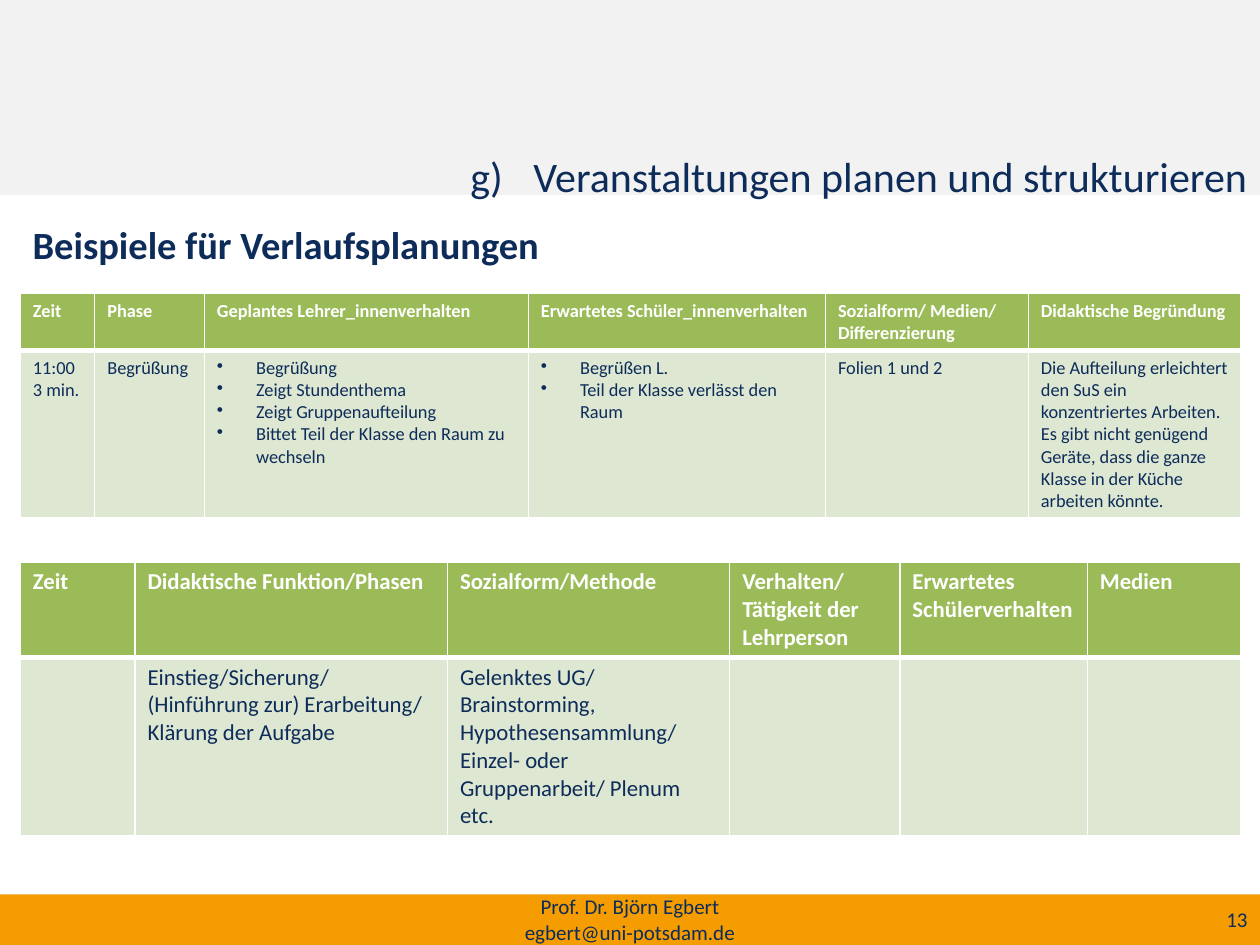
from lxml import etree
from pptx import Presentation
from pptx.dml.color import RGBColor
from pptx.enum.shapes import MSO_SHAPE
from pptx.enum.text import MSO_ANCHOR, MSO_AUTO_SIZE, PP_ALIGN
from pptx.oxml.ns import qn
from pptx.util import Cm, Pt

NAVY = RGBColor(0x0D, 0x2C, 0x5A)
WHITE = RGBColor(0xFF, 0xFF, 0xFF)
LIGHT_GREY = RGBColor(0xF2, 0xF2, 0xF2)
ORANGE = RGBColor(0xF5, 0x9C, 0x00)
GREEN = RGBColor(0x9B, 0xBB, 0x59)
PALE_GREEN = RGBColor(0xDE, 0xE7, 0xD1)
FONT = "Calibri"
SLIDE_WIDTH = 25.4
TABLE_LEFT = 0.41

# Each cell is a list of paragraphs; those starting with "•" become bullets
LESSON_PLAN = [
    [["Zeit"], ["Phase"], ["Geplantes Lehrer_innenverhalten"],
     ["Erwartetes Schüler_innenverhalten"],
     ["Sozialform/ Medien/ Differenzierung"], ["Didaktische Begründung"]],
    [["11:00", "3 min."], ["Begrüßung"],
     ["•Begrüßung", "•Zeigt Stundenthema", "•Zeigt Gruppenaufteilung",
      "•Bittet Teil der Klasse den Raum zu wechseln"],
     ["•Begrüßen L.", "•Teil der Klasse verlässt den Raum"],
     ["Folien 1 und 2"],
     ["Die Aufteilung erleichtert den SuS ein konzentriertes Arbeiten. "
      "Es gibt nicht genügend Geräte, dass die ganze Klasse in der Küche "
      "arbeiten könnte."]],
]
PLAN_TEMPLATE = [
    [["Zeit"], ["Didaktische Funktion/Phasen"], ["Sozialform/Methode"],
     ["Verhalten/ Tätigkeit der Lehrperson"],
     ["Erwartetes Schülerverhalten"], ["Medien"]],
    [[],
     ["Einstieg/Sicherung/ (Hinführung zur) Erarbeitung/ Klärung der Aufgabe"],
     ["Gelenktes UG/ Brainstorming, Hypothesensammlung/ Einzel- oder "
      "Gruppenarbeit/ Plenum etc."],
     [], [], []],
]


def add_marker(paragraph, indent, tag, **attributes):
    """Give a paragraph a hanging bullet or number."""
    properties = paragraph._p.get_or_add_pPr()
    properties.set("marL", str(indent))
    properties.set("indent", str(-indent))
    etree.SubElement(properties, qn(tag), attributes)


def style_paragraph(paragraph, size, color=NAVY, bold=False, align=PP_ALIGN.LEFT):
    paragraph.alignment = align
    for run in paragraph.runs:
        run.font.name = FONT
        run.font.size = Pt(size)
        run.font.bold = bold
        run.font.color.rgb = color


def add_band(slide, top, height, color):
    band = slide.shapes.add_shape(
        MSO_SHAPE.RECTANGLE, 0, Cm(top), Cm(SLIDE_WIDTH), Cm(height))
    band.shadow.inherit = False
    band.fill.solid()
    band.fill.fore_color.rgb = color
    band.line.fill.background()


def add_text(slide, text, left, top, width, height, size,
             bold=False, align=PP_ALIGN.LEFT, anchor=MSO_ANCHOR.TOP):
    frame = slide.shapes.add_textbox(
        Cm(left), Cm(top), Cm(width), Cm(height)).text_frame
    frame.word_wrap = True
    frame.vertical_anchor = anchor
    frame.text = text
    for paragraph in frame.paragraphs:
        style_paragraph(paragraph, size, bold=bold, align=align)


def set_title(slide, text):
    title = slide.shapes.title
    title.left, title.top = Cm(3.5), Cm(2.9)
    title.width, title.height = Cm(21.9), Cm(1.25)
    frame = title.text_frame
    frame.auto_size = MSO_AUTO_SIZE.NONE
    frame.vertical_anchor = MSO_ANCHOR.TOP
    frame.text = text
    heading = frame.paragraphs[0]
    add_marker(heading, Cm(1.27), "a:buAutoNum", type="alphaLcParenR", startAt="7")
    style_paragraph(heading, 24, align=PP_ALIGN.RIGHT)
    # Bring the title in front of the grey band
    title.element.getparent().append(title.element)


def set_borders(cell, bottom_width):
    properties = cell._tc.get_or_add_tcPr()
    for side, width in (("L", 1), ("R", 1), ("T", 1), ("B", bottom_width)):
        line = etree.SubElement(properties, qn(f"a:ln{side}"), w=str(Pt(width)))
        fill = etree.SubElement(line, qn("a:solidFill"))
        etree.SubElement(fill, qn("a:srgbClr"), val=str(WHITE))


def fill_cell(cell, lines, size, is_header):
    set_borders(cell, 3 if is_header else 1)
    cell.fill.solid()
    cell.fill.fore_color.rgb = GREEN if is_header else PALE_GREEN
    cell.text_frame.text = "\n".join(line.lstrip("•") for line in lines)
    for line, paragraph in zip(lines, cell.text_frame.paragraphs):
        if line.startswith("•"):
            add_marker(paragraph, Cm(0.79), "a:buChar", char="•")
        style_paragraph(paragraph, size, WHITE if is_header else NAVY, is_header)


def add_plan(slide, rows, top, widths, heights, size):
    table = slide.shapes.add_table(
        len(rows), len(widths), Cm(TABLE_LEFT), Cm(top),
        Cm(sum(widths)), Cm(sum(heights))).table
    table.horz_banding = False
    for column, width in zip(table.columns, widths):
        column.width = Cm(width)
    for row_index, (row, height) in enumerate(zip(rows, heights)):
        table.rows[row_index].height = Cm(height)
        for column_index, lines in enumerate(row):
            fill_cell(table.cell(row_index, column_index), lines, size,
                      is_header=row_index == 0)


def main():
    presentation = Presentation()
    presentation.slide_width = Cm(SLIDE_WIDTH)
    presentation.slide_height = Cm(19.05)
    slide = presentation.slides.add_slide(presentation.slide_layouts[5])

    # Header and footer bands
    add_band(slide, 0, 3.93, LIGHT_GREY)
    add_band(slide, 18.03, 1.02, ORANGE)
    add_text(slide, "13", 19.3, 18.01, 6.1, 1.02, 12,
             align=PP_ALIGN.RIGHT, anchor=MSO_ANCHOR.MIDDLE)
    add_text(slide, "Prof. Dr. Björn Egbert\negbert@uni-potsdam.de",
             8.41, 18.01, 8.58, 1.04, 12,
             align=PP_ALIGN.CENTER, anchor=MSO_ANCHOR.MIDDLE)

    # Headings
    set_title(slide, "Veranstaltungen planen und strukturieren")
    add_text(slide, "Beispiele für Verlaufsplanungen",
             TABLE_LEFT, 4.34, 21.9, 1.25, 22, bold=True)

    # Two sample lesson plans
    add_plan(slide, LESSON_PLAN, 5.92,
             [1.5, 2.21, 6.53, 5.99, 4.09, 4.29], [1.14, 3.38], 10.5)
    add_plan(slide, PLAN_TEMPLATE, 11.33,
             [2.31, 6.3, 5.69, 3.43, 3.78, 3.1], [1.92, 3.6], 13)

    presentation.save("out.pptx")


if __name__ == "__main__":
    main()
